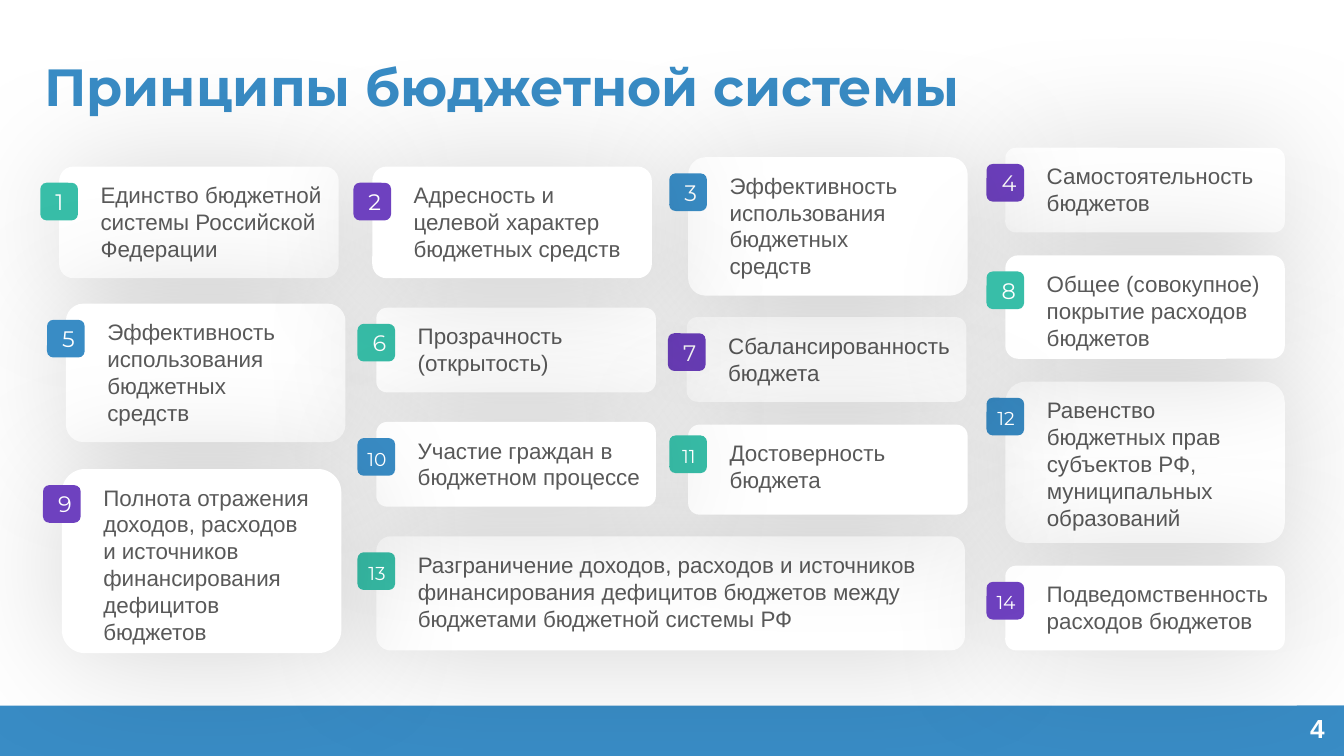
from copy import deepcopy
from dataclasses import dataclass

from lxml import etree
from pptx import Presentation
from pptx import util as u
from pptx.dml.color import RGBColor
from pptx.enum import shapes, text
from pptx.oxml import ns

WIDTH = 10
HEIGHT = WIDTH * 9 / 16
FOOTER_TOP = 5.25
COLORS = {"blue": "398CC5", "teal": "38BEA8", "purple": "6E41BF",
          "white": "FFFFFF", "body": "595959", "shadow": "000000"}
COLUMNS = [0.44, 2.8, 5.12, 7.48]
CARD_W, BADGE, LINE = 2.08, 0.28, 0.2
RECT = shapes.MSO_SHAPE.RECTANGLE
ROUND = shapes.MSO_SHAPE.ROUNDED_RECTANGLE


@dataclass
class Card:
    number: int
    column: int
    top: float
    height: float
    lines: int
    color: str
    label: str
    shift: float = 0
    width: float = CARD_W
    text_w: float = 1.87
    badge_dy: float = 0.12

    @property
    def left(self):
        return COLUMNS[self.column] + self.shift

    @property
    def badge_at(self):
        return self.left - 0.14, self.top + self.badge_dy


CARDS = [
    Card(1, 0, 1.24, 0.83, 3, "teal", "Единство бюджетной системы Российской Федерации"),
    Card(4, 3, 1.1, 0.63, 2, "purple", "Самостоятельность бюджетов"),
    Card(12, 3, 2.84, 1.2, 5, "blue",
         "Равенство бюджетных прав субъектов РФ, муниципальных образований", text_w=1.62),
    Card(7, 2, 2.36, 0.63, 2, "purple", "Сбалансированность бюджета", shift=-0.01),
    Card(5, 0, 2.26, 1.03, 4, "blue", "Эффективность использования бюджетных средств",
         shift=0.05, text_w=1.62),
    Card(13, 1, 3.99, 0.85, 3, "teal",
         "Разграничение доходов, расходов и источников финансирования дефицитов "
         "бюджетов между бюджетами бюджетной системы РФ", width=4.38, text_w=3.95),
    Card(3, 2, 1.17, 1.03, 4, "blue", "Эффективность использования бюджетных средств",
         text_w=1.62),
    Card(8, 3, 1.9, 0.77, 3, "teal", "Общее (совокупное) покрытие расходов бюджетов"),
    Card(6, 1, 2.29, 0.63, 2, "teal", "Прозрачность (открытость)"),
    Card(2, 1, 1.24, 0.83, 3, "purple", "Адресность и целевой характер бюджетных средств",
         shift=-0.03),
    Card(14, 3, 4.21, 0.63, 2, "purple", "Подведомственность расходов бюджетов"),
    Card(11, 2, 3.16, 0.67, 2, "teal", "Достоверность бюджета", badge_dy=0.08),
    Card(10, 1, 3.14, 0.63, 2, "blue", "Участие граждан в бюджетном процессе"),
    Card(9, 0, 3.49, 1.37, 6, "purple",
         "Полнота отражения доходов, расходов \vи источников финансирования "
         "дефицитов \vбюджетов", shift=0.02, text_w=2.05),
]


def rgb(name):
    return RGBColor.from_string(COLORS[name])


def inches(*values):
    return [u.Inches(v) for v in values]


def write(sp, words, size=12, font="Arial", color="body", bold=False,
          align=text.PP_ALIGN.LEFT, anchor=text.MSO_ANCHOR.TOP, wrap=True):
    tf = sp.text_frame
    tf.word_wrap = wrap
    tf.vertical_anchor = anchor
    p = tf.paragraphs[0]
    p.text = words
    p.alignment = align
    for r in p.runs:
        r.font.size = u.Pt(size)
        r.font.name = font
        r.font.bold = bold
        r.font.color.rgb = rgb(color)
    for br in p._p.findall(ns.qn("a:br")):
        br.append(deepcopy(p.runs[0]._r.rPr))


def box(parent, kind, color, *at):
    sp = parent.shapes.add_shape(kind, *inches(*at))
    sp.shadow.inherit = False
    sp.fill.solid()
    sp.fill.fore_color.rgb = rgb(color)
    sp.line.fill.background()
    return sp


def label(parent, words, *at, **style):
    sp = parent.shapes.add_textbox(*inches(*at))
    write(sp, words, **style)


def soft_shadow(sp):
    effects = sp._element.spPr.find(ns.qn("a:effectLst"))
    shadow = etree.SubElement(effects, ns.qn("a:outerShdw"), blurRad=str(u.Pt(69)),
                              dist=str(u.Pt(3)), dir=str(45 * 60000),
                              algn="tl", rotWithShape="0")
    color = etree.SubElement(shadow, ns.qn("a:srgbClr"), val=COLORS["shadow"])
    etree.SubElement(color, ns.qn("a:alpha"), val="16000")


def add_title(s, words):
    sp = s.shapes.title
    sp.left, sp.top, sp.width, sp.height = inches(0.23, 0.35, 9.02, 0.57)
    write(sp, words, size=28, font="Montserrat", color="blue", bold=True)
    sp.text_frame.auto_size = text.MSO_AUTO_SIZE.NONE


def add_footer(s, number):
    group = s.shapes.add_group_shape()
    box(group, RECT, "blue", 0, FOOTER_TOP, WIDTH, HEIGHT - FOOTER_TOP)
    sp = box(group, RECT, "blue", 9.65, FOOTER_TOP, 0.35, 0.34)
    write(sp, number, size=14, color="white", bold=True)


def add_card(s, card):
    group = s.shapes.add_group_shape()
    panel = box(group, ROUND, "white", card.left, card.top, card.width, card.height)
    panel.adjustments[0] = 0.126
    soft_shadow(panel)
    label(group, card.label, card.left + 0.21, card.top + 0.06,
          card.text_w, 0.1 + LINE * card.lines)
    badge = box(group, ROUND, card.color, *card.badge_at, BADGE, BADGE)
    if card.number < 10:
        write(badge, str(card.number), font="Montserrat", color="white",
              align=text.PP_ALIGN.CENTER, anchor=text.MSO_ANCHOR.MIDDLE)


def add_long_number(s, card):
    x, y = card.badge_at
    label(s, str(card.number), x - 0.05, y + 0.02, 0.39, 0.27, size=10,
          font="Montserrat", color="white", align=text.PP_ALIGN.CENTER, wrap=False)


def main():
    prs = Presentation()
    prs.slide_width, prs.slide_height = inches(WIDTH, HEIGHT)
    s = prs.slides.add_slide(prs.slide_layouts[5])
    add_footer(s, "4")
    add_title(s, "Принципы бюджетной системы")
    for card in CARDS:
        add_card(s, card)
    for card in sorted(CARDS, key=lambda c: c.number):
        if card.number >= 10:
            add_long_number(s, card)
    prs.save("out.pptx")


if __name__ == "__main__":
    main()
